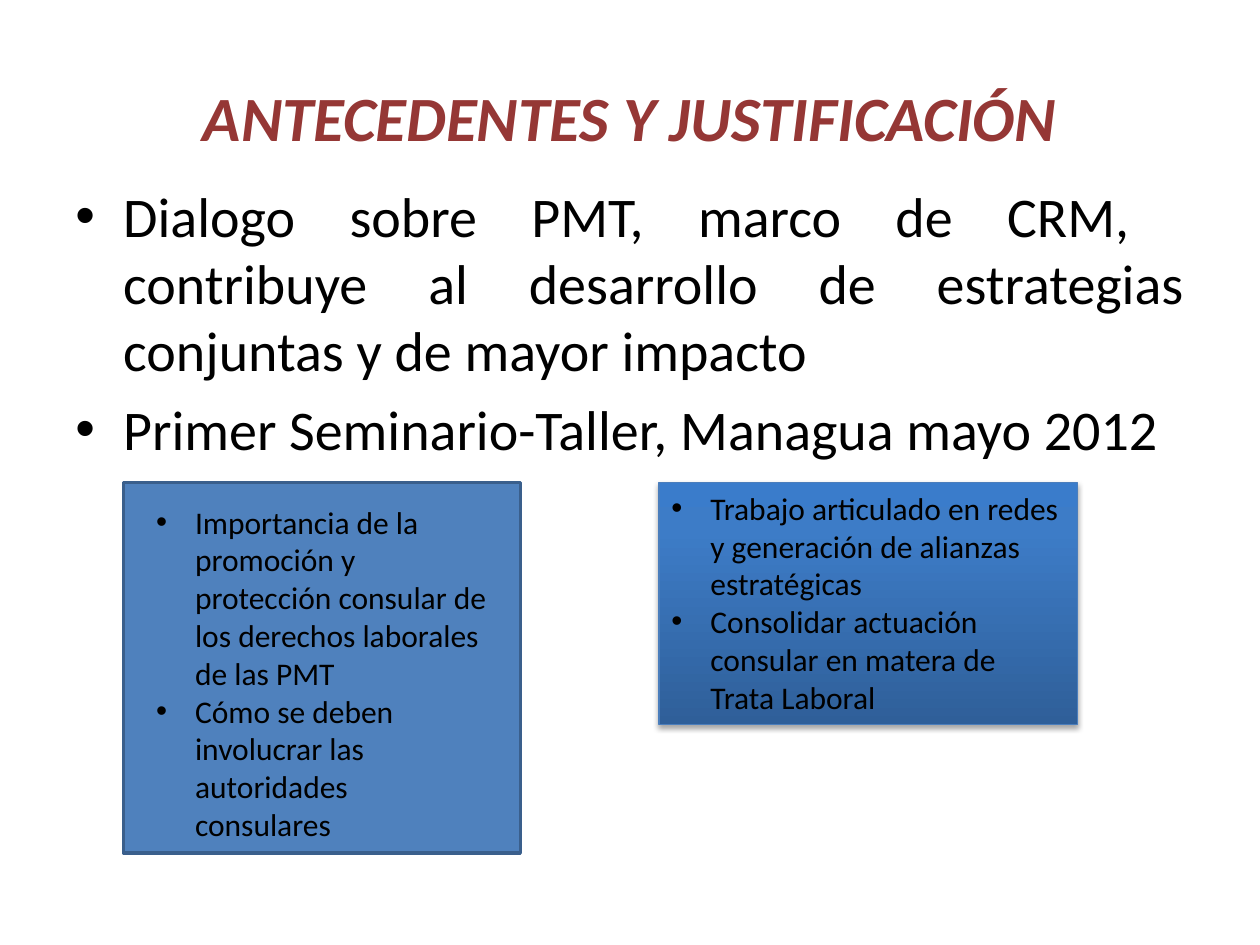
from lxml.etree import SubElement
from pptx import Presentation
from pptx.dml.color import RGBColor
from pptx.enum.shapes import MSO_SHAPE
from pptx.enum.text import MSO_ANCHOR, PP_ALIGN
from pptx.oxml.ns import qn
from pptx.util import Inches, Pt


def paint(code):
    return RGBColor.from_string(code)


def add(node, tag, **attrs):
    return SubElement(node, qn(tag), {key: str(val) for key, val in attrs.items()})


class Deck:
    font = "Calibri"
    ink = "000000"

    def __init__(self, show):
        self.slide = show.slides.add_slide(show.slide_layouts[5])

    def style(self, para, size, color, **extra):
        form = {"name": self.font, "size": Pt(size), **extra}
        for run in para.runs:
            for key, val in form.items():
                setattr(run.font, key, val)
            run.font.color.rgb = paint(color)

    def title(self, text, box, size, color):
        head = self.slide.shapes.title
        for key, val in zip(("left", "top", "width", "height"), box):
            setattr(head, key, Inches(val))
        head.text_frame.text = text
        head.text_frame.vertical_anchor = MSO_ANCHOR.MIDDLE
        para = head.text_frame.paragraphs[0]
        para.alignment = PP_ALIGN.CENTER
        self.style(para, size, color, bold=True, italic=True)

    def fill_list(self, shape, items, size, indent, align=PP_ALIGN.LEFT, gap=0):
        frame = shape.text_frame
        frame.word_wrap = True
        frame.vertical_anchor = MSO_ANCHOR.TOP
        for num, item in enumerate(items):
            para = frame.add_paragraph() if num else frame.paragraphs[0]
            para.text = item
            para.alignment = align
            para.space_before = Pt(gap)
            self.style(para, size, self.ink)
            props = para._p.get_or_add_pPr()
            props.set("marL", str(Inches(indent)))
            props.set("indent", str(-Inches(indent)))
            add(props, "a:buFont", typeface="Arial")
            add(props, "a:buChar", char="•")

    def list(self, items, box, size, indent, **form):
        shape = self.slide.shapes.add_textbox(*map(Inches, box))
        self.fill_list(shape, items, size, indent, **form)

    def panel(self, box, fill, edge, width):
        shape = self.slide.shapes.add_shape(MSO_SHAPE.RECTANGLE, *map(Inches, box))
        shape.shadow.inherit = False
        shape.fill.solid()
        shape.fill.fore_color.rgb = paint(fill)
        shape.line.color.rgb = paint(edge)
        shape.line.width = Pt(width)
        return shape

    def shade(self, shape, stops, angle):
        shape.fill.gradient()
        grad = shape._element.spPr.find(qn("a:gradFill"))
        for child in list(grad):
            grad.remove(child)
        group = add(grad, "a:gsLst")
        for pos, code in stops:
            stop = add(group, "a:gs", pos=pos * 1000)
            add(stop, "a:srgbClr", val=code)
        add(grad, "a:lin", ang=angle * 60000, scaled=0)

    def shadow(self, shape, code, alpha, blur, dist, angle):
        effect = shape._element.spPr.find(qn("a:effectLst"))
        outer = add(effect, "a:outerShdw", blurRad=Pt(blur), dist=Pt(dist),
                    dir=angle * 60000, rotWithShape=0)
        color = add(outer, "a:srgbClr", val=code)
        add(color, "a:alpha", val=alpha * 1000)


def main():
    show = Presentation()
    show.slide_width, show.slide_height = Inches(10), Inches(7.5)
    deck = Deck(show)
    deck.title("ANTECEDENTES Y JUSTIFICACIÓN", (0.5, 0.3, 9, 1.25), 36, "953735")
    deck.list([
        "Dialogo sobre PMT, marco de CRM,  contribuye al desarrollo de "
        "estrategias conjuntas y de mayor impacto",
        "Primer Seminario-Taller, Managua mayo 2012",
    ], (0.5, 1.39, 9, 5.31), 32, 0.38, align=PP_ALIGN.JUSTIFY, gap=6.4)

    deck.panel((0.98, 3.83, 3.15, 2.94), "4F81BD", "3A5F8C", 2)
    deck.list([
        "Importancia de la promoción y protección consular de los derechos "
        "laborales de las PMT",
        "Cómo se deben involucrar las autoridades consulares",
    ], (1.14, 3.94, 2.83, 2.83), 18, 0.31)

    card = deck.panel((5.23, 3.83, 3.32, 1.92), "3D7CC7", "4B7EBC", 0.75)
    deck.shade(card, [(0, "2F5F99"), (80, "3D7CC7"), (100, "3A7CCB")], 270)
    deck.shadow(card, "000000", 35, 3.1, 1.8, 90)
    deck.fill_list(card, [
        "Trabajo articulado en redes y generación de alianzas estratégicas",
        "Consolidar actuación consular en matera de Trata Laboral",
    ], 18, 0.31)
    show.save("out.pptx")


if __name__ == "__main__":
    main()
